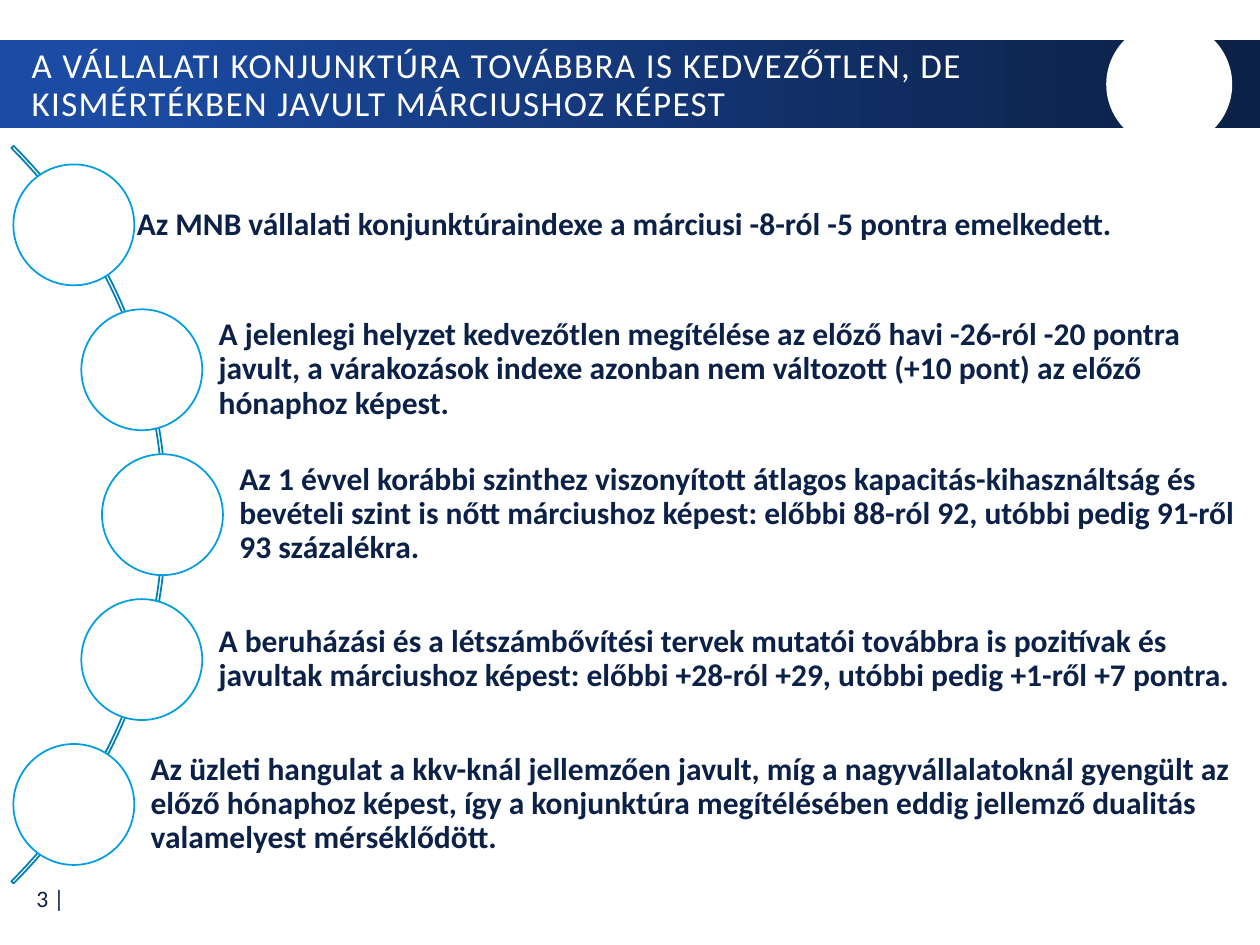
from math import sqrt

from pptx import Presentation
from pptx.dml.color import RGBColor
from pptx.enum.shapes import MSO_SHAPE
from pptx.enum.text import MSO_ANCHOR, MSO_AUTO_SIZE, PP_ALIGN
from pptx.util import Inches, Pt

RECTANGLE, OVAL, BLOCK_ARC = MSO_SHAPE.RECTANGLE, MSO_SHAPE.OVAL, MSO_SHAPE.BLOCK_ARC
MIDDLE = MSO_ANCHOR.MIDDLE
NO_AUTOFIT = MSO_AUTO_SIZE.NONE
LEFT, RIGHT = PP_ALIGN.LEFT, PP_ALIGN.RIGHT

NAVY = RGBColor(0x0C, 0x21, 0x48)
BLUE = RGBColor(0x1B, 0x4B, 0xA3)
ARC_BLUE = RGBColor(0x00, 0x7F, 0xB3)
CIRCLE_BLUE = RGBColor(0x00, 0x9E, 0xE0)
WHITE = RGBColor(0xFF, 0xFF, 0xFF)
FONT = "Calibri"

TITLE = ("A VÁLLALATI KONJUNKTÚRA TOVÁBBRA IS KEDVEZŐTLEN, DE "
         "KISMÉRTÉKBEN JAVULT MÁRCIUSHOZ KÉPEST")
FINDINGS = [
    "Az MNB vállalati konjunktúraindexe a márciusi -8-ról -5 pontra emelkedett.",
    "A jelenlegi helyzet kedvezőtlen megítélése az előző havi -26-ról -20 pontra "
    "javult, a várakozások indexe azonban nem változott (+10 pont) az előző "
    "hónaphoz képest.",
    "Az 1 évvel korábbi szinthez viszonyított átlagos kapacitás-kihasználtság és "
    "bevételi szint is nőtt márciushoz képest: előbbi 88-ról 92, utóbbi pedig "
    "91-ről 93 százalékra.",
    "A beruházási és a létszámbővítési tervek mutatói továbbra is pozitívak és "
    "javultak márciushoz képest: előbbi +28-ról +29, utóbbi pedig +1-ről +7 pontra.",
    "Az üzleti hangulat a kkv-knál jellemzően javult, míg a nagyvállalatoknál "
    "gyengült az előző hónaphoz képest, így a konjunktúra megítélésében eddig "
    "jellemző dualitás valamelyest mérséklődött.",
]


def add_plain_shape(slide, preset, left, top, width, height, fill=None, line=None):
    shape = slide.shapes.add_shape(
        preset, Inches(left), Inches(top), Inches(width), Inches(height))
    shape.shadow.inherit = False
    if fill is None:
        shape.fill.background()
    else:
        shape.fill.solid()
        shape.fill.fore_color.rgb = fill
    if line is None:
        shape.line.fill.background()
    else:
        shape.line.color.rgb = line
        shape.line.width = Pt(1)
    return shape


def write_text(frame, text, size, color, align=LEFT, bold=False, line_spacing=None):
    frame.word_wrap = True
    frame.auto_size = NO_AUTOFIT
    frame.vertical_anchor = MIDDLE
    paragraph = frame.paragraphs[0]
    paragraph.alignment = align
    paragraph.line_spacing = line_spacing
    run = paragraph.add_run()
    run.text = text
    run.font.name = FONT
    run.font.size = Pt(size)
    run.font.bold = bold
    run.font.color.rgb = color
    return run


def add_header(slide, left, top, width, height):
    # Gradient band
    band = add_plain_shape(slide, RECTANGLE, left, top, width, height, BLUE)
    band.fill.gradient()
    band.fill.gradient_angle = 0
    for stop, position, color in zip(
            band.fill.gradient_stops, (0.09, 0.95), (BLUE, NAVY)):
        stop.position = position
        stop.color.rgb = color

    # White emblem circle, 1 inch across
    add_plain_shape(slide, OVAL, left + width - 1.22, top + height / 2 - 0.5, 1, 1, WHITE)

    # Title, brought in front of the band
    title = slide.shapes.title
    title.left, title.top = Inches(left + 0.15), Inches(top + 0.03)
    title.width, title.height = Inches(8.7), Inches(height - 0.03)
    run = write_text(title.text_frame, TITLE, 20, WHITE, line_spacing=0.9)
    run.font._element.set("spc", "80")
    slide.shapes._spTree.append(title._element)


def add_finding(slide, text, center_x, center_y, right, text_inset):
    bar_height, diameter = 0.77, 0.96
    bar = add_plain_shape(slide, RECTANGLE, center_x, center_y - bar_height / 2,
                          right - center_x, bar_height, WHITE)
    frame = bar.text_frame
    frame.margin_left = Inches(text_inset)
    frame.margin_top = frame.margin_right = frame.margin_bottom = Inches(0.05)
    write_text(frame, text, 18, NAVY, bold=True, line_spacing=0.9)
    add_plain_shape(slide, OVAL, center_x - diameter / 2, center_y - diameter / 2,
                    diameter, diameter, WHITE, CIRCLE_BLUE)


def add_findings_on_arc(slide, left, top, right, bottom):
    arc_size, orbit, pitch = 8.28, 4.11, 1.15
    arc_x, arc_y = left - 2.92, (top + bottom) / 2

    # Arc, a quarter circle open to the left
    arc = add_plain_shape(slide, BLOCK_ARC, arc_x - arc_size / 2, arc_y - arc_size / 2,
                          arc_size, arc_size, line=ARC_BLUE)
    for index, value in enumerate((189, 27, 0.003)):
        arc.adjustments[index] = value

    # Bars whose circles are centred on the arc
    for row, text in enumerate(FINDINGS):
        offset = (row - (len(FINDINGS) - 1) / 2) * pitch
        text_inset = 0.5 if row == 0 else 0.61
        add_finding(slide, text, arc_x + sqrt(orbit ** 2 - offset ** 2),
                    arc_y + offset, right, text_inset)


def add_page_number(slide, left, top, width, height):
    box = slide.shapes.add_textbox(
        Inches(left), Inches(top), Inches(width), Inches(height))
    write_text(box.text_frame, "3 |", 13.5, NAVY, align=RIGHT)


def main():
    presentation = Presentation()
    presentation.slide_width, presentation.slide_height = Inches(10), Inches(7.5)
    slide = presentation.slides.add_slide(presentation.slide_layouts[5])
    add_page_number(slide, 0.01, 6.94, 0.6, 0.37)
    add_header(slide, 0, 0.32, 10, 0.7)
    add_findings_on_arc(slide, 0.1, 1.3, 9.91, 6.87)
    presentation.save("out.pptx")


if __name__ == "__main__":
    main()
